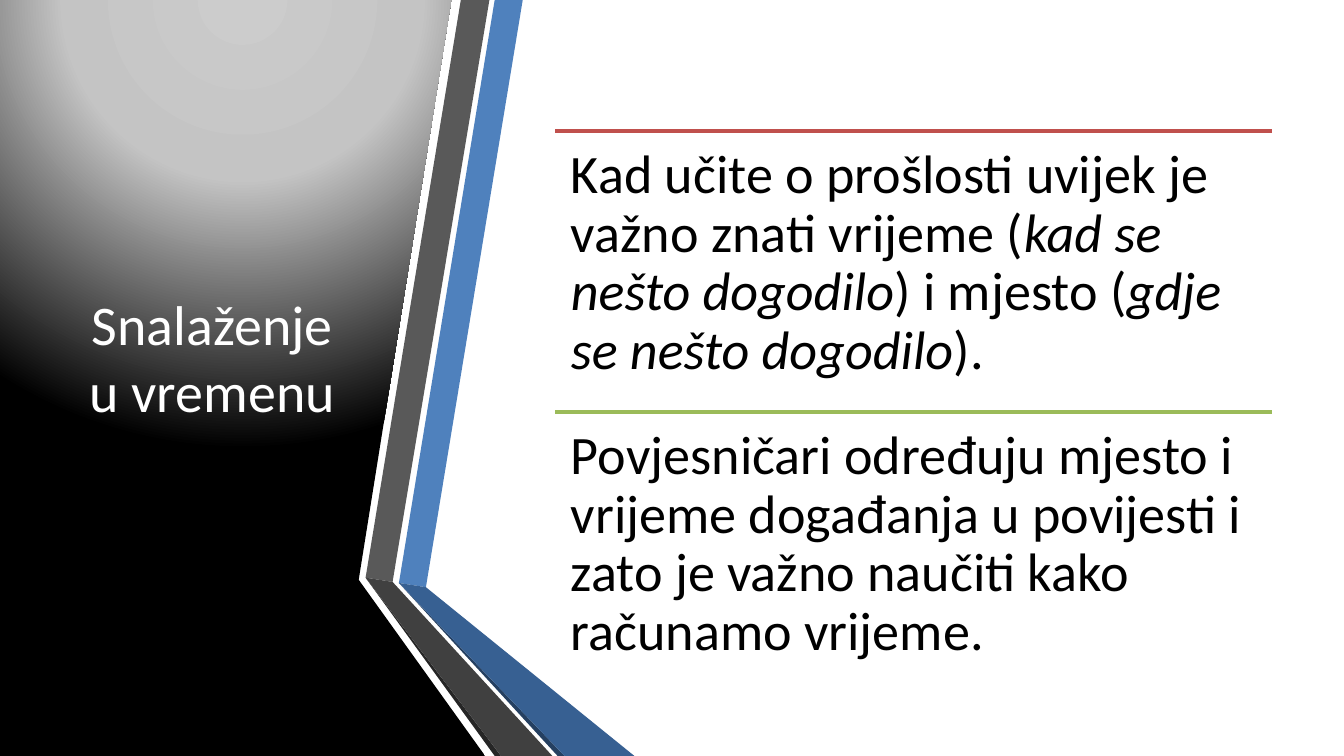
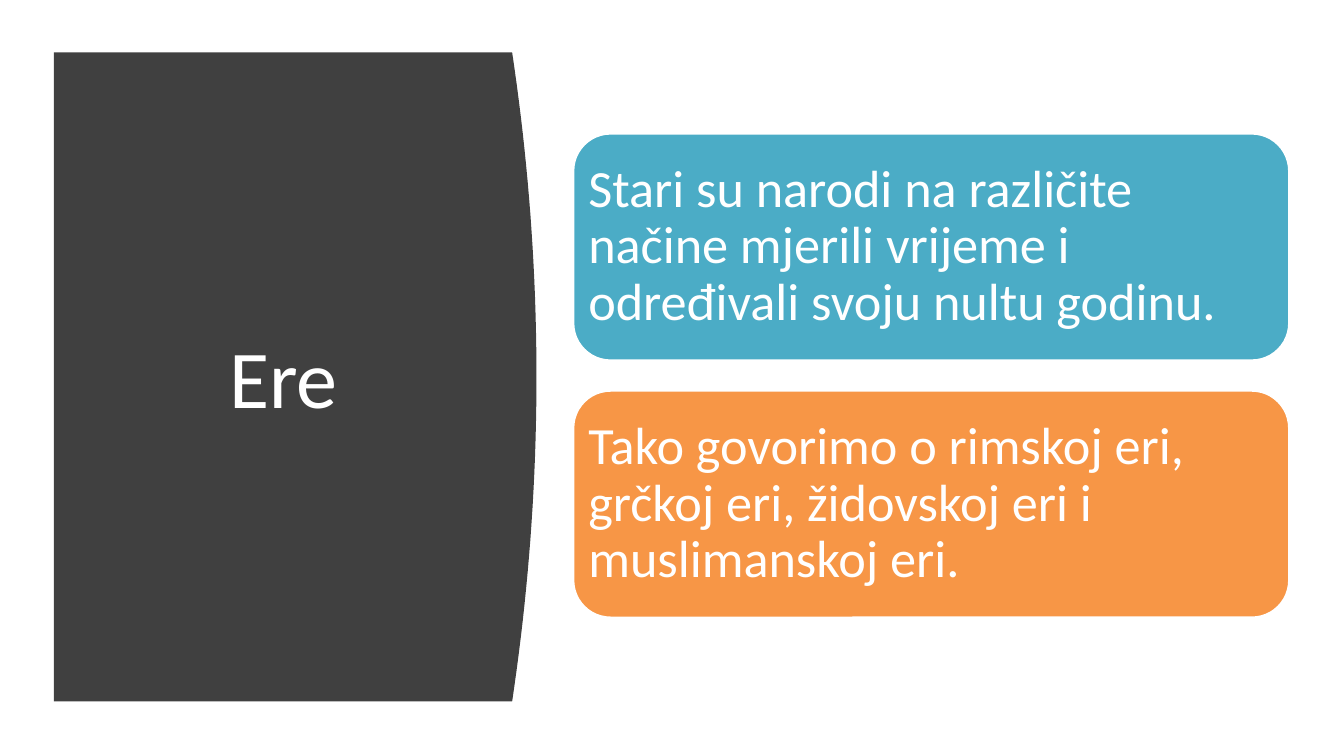
from pptx import Presentation
from pptx import util as u
from pptx.dml.color import RGBColor
from pptx.enum import shapes, text
from pptx.oxml import parse_xml
from pptx.oxml.ns import nsdecls, qn
from lxml import etree

WHITE = RGBColor(0xFF, 0xFF, 0xFF)
BLACK = RGBColor(0x00, 0x00, 0x00)
CHARCOAL = RGBColor(0x40, 0x40, 0x40)
GREY = RGBColor(0x59, 0x59, 0x59)
SHADE = RGBColor(0x26, 0x26, 0x26)
BLUE = RGBColor(0x4F, 0x81, 0xBD)
STEEL = RGBColor(0x37, 0x60, 0x92)
NAVY = RGBColor(0x25, 0x40, 0x61)
RED = RGBColor(0xC0, 0x50, 0x4D)
GREEN = RGBColor(0x9B, 0xBB, 0x59)
TEAL = RGBColor(0x4B, 0xAC, 0xC6)
ORANGE = RGBColor(0xF7, 0x96, 0x46)

WIDTH, HEIGHT = 25.4, 14.29


class Designer:
    """Holds the deck's style and draws on the current slide; lengths in cm."""

    font_name = "Calibri"
    inset = 0.3
    line_width = u.Pt(2)

    def __init__(self):
        self.deck = Presentation()
        self.deck.slide_width = u.Cm(WIDTH)
        self.deck.slide_height = u.Cm(HEIGHT)
        self.page = None

    def new_page(self):
        self.page = self.deck.slides.add_slide(self.deck.slide_layouts[6])

    def set_text(self, frame, spans, inset=inset, anchor=text.MSO_ANCHOR.TOP,
                 align=text.PP_ALIGN.LEFT, spacing=0.9, color=BLACK, **font):
        """Fill a text frame with one paragraph; spans are (words, italic) pairs."""
        margins = {f"margin_{side}": u.Cm(inset) for side in ("left", "top", "right", "bottom")}
        for name, value in {"word_wrap": True, "vertical_anchor": anchor, **margins}.items():
            setattr(frame, name, value)
        para = frame.paragraphs[0]
        para.alignment, para.line_spacing = align, spacing
        for words, italic in spans:
            span = para.add_run()
            span.text = words
            for name, value in {"name": self.font_name, "italic": italic, **font}.items():
                setattr(span.font, name, value)
            span.font.color.rgb = color

    def text_box(self, place, spans, **style):
        box = self.page.shapes.add_textbox(*map(u.Cm, place))
        self.set_text(box.text_frame, spans, **style)

    def title(self, place, words, size):
        self.text_box(place, [(words, False)], size=u.Pt(size), color=WHITE, spacing=1.0,
                      anchor=text.MSO_ANCHOR.MIDDLE, align=text.PP_ALIGN.CENTER)

    def polygon(self, points, color):
        corners = [(u.Cm(x), u.Cm(y)) for x, y in points]
        builder = self.page.shapes.build_freeform(*corners[0], scale=1.0)
        builder.add_line_segments(corners[1:], close=True)
        outline = builder.convert_to_shape()
        outline.shadow.inherit = False
        outline.fill.solid()
        outline.fill.fore_color.rgb = color
        outline.line.fill.background()
        return outline

    def spotlight(self, points, stops):
        """Polygon with a round gradient whose focus lies above its top edge."""
        outline = self.polygon(points, BLACK)
        marks = "".join(f'<a:gs pos="{percent * 1000}"><a:srgbClr val="{color}"/></a:gs>'
                        for percent, color in stops)
        gradient = parse_xml(
            f'<a:gradFill {nsdecls("a")} rotWithShape="1"><a:gsLst>{marks}</a:gsLst>'
            '<a:path path="circle"><a:fillToRect l="50000" t="-80000" r="50000" b="180000"/>'
            '</a:path></a:gradFill>')
        properties = outline.element.spPr
        properties.replace(properties.find(qn("a:solidFill")), gradient)

    def rule(self, left, top, width, color):
        line = self.page.shapes.add_connector(
            shapes.MSO_CONNECTOR.STRAIGHT, *map(u.Cm, (left, top, left + width, top)))
        line.line.color.rgb = color
        line.line.width = self.line_width
        etree.SubElement(line.element.spPr, qn("a:effectLst"))

    def card(self, place, words, color):
        card = self.page.shapes.add_shape(shapes.MSO_SHAPE.ROUNDED_RECTANGLE, *map(u.Cm, place))
        card.shadow.inherit = False
        card.fill.solid()
        card.fill.fore_color.rgb = color
        card.line.color.rgb = WHITE
        card.line.width = self.line_width
        self.set_text(card.text_frame, [(words, False)], inset=0.09, size=u.Pt(28), color=WHITE,
                      anchor=text.MSO_ANCHOR.MIDDLE)


def draw_folded_ribbon(designer):
    grey_left, grey_right = (6.91, 10.92), (7.42, 11)
    blue_left, blue_right = (7.54, 11.02), (8.05, 11.1)
    grey_foot, blue_foot = (9.47, HEIGHT), (10.67, HEIGHT)
    facets = [
        (BLUE, [blue_left, blue_right, (9.88, 0), (9.35, 0)]),
        (GREY, [grey_left, grey_right, (9.25, 0), (8.71, 0)]),
        (SHADE, [grey_left, (9.35, HEIGHT), grey_foot]),
        (NAVY, [blue_left, (10.54, HEIGHT), blue_foot]),
        (STEEL, [blue_left, blue_foot, (11.99, HEIGHT), blue_right]),
        (CHARCOAL, [grey_left, grey_foot, (10.44, HEIGHT), grey_right]),
    ]
    for color, points in facets:
        designer.polygon(points, color)


def draw_time_page(designer):
    designer.new_page()
    designer.spotlight([(0, 0), (8.53, 0), (6.78, 10.96), (9.17, HEIGHT), (0, HEIGHT)],
                       [(0, "CCCCCC"), (40, "C4C4C4"), (100, "000000")])
    draw_folded_ribbon(designer)
    designer.title((1.12, 1.42, 5.79, 10.64), "Snalaženje u vremenu", 30)
    sections = [
        (RED, [("Kad učite o prošlosti uvijek je važno znati vrijeme (", False),
               ("kad se nešto dogodilo", True), (") i mjesto (", False),
               ("gdje se nešto dogodilo", True), (").", False)]),
        (GREEN, [("Povjesničari određuju mjesto i vrijeme događanja u povijesti "
                  "i zato je važno naučiti kako računamo vrijeme.", False)]),
    ]
    left, top, width, height = 10.49, 2.48, 13.54, 5.31
    for index, (color, spans) in enumerate(sections):
        y = top + index * height
        designer.rule(left, y, width, color)
        designer.text_box((left, y, width, height), spans, size=u.Pt(29), color=BLACK)


def draw_eras_page(designer):
    designer.new_page()
    left, right, top, bottom, bulge, steps = 1.02, 9.68, 0.99, 13.26, 0.46, 40
    curve = [(right + bulge * (1 - (2 * step / steps - 1) ** 2),
              top + (bottom - top) * step / steps) for step in range(steps + 1)]
    designer.polygon([(left, top), *curve, (left, bottom)], CHARCOAL)
    designer.title((1.8, 2.11, 7.11, 9.98), "Ere", 44)
    cards = [
        (TEAL, "Stari su narodi na različite načine mjerili vrijeme i određivali "
               "svoju nultu godinu."),
        (ORANGE, "Tako govorimo o rimskoj eri, grčkoj eri, židovskoj eri i muslimanskoj eri."),
    ]
    for index, (color, words) in enumerate(cards):
        designer.card((10.82, 2.51 + index * 4.86, 13.56, 4.32), words, color)


def main():
    designer = Designer()
    draw_time_page(designer)
    draw_eras_page(designer)
    designer.deck.save("out.pptx")


if __name__ == "__main__":
    main()
